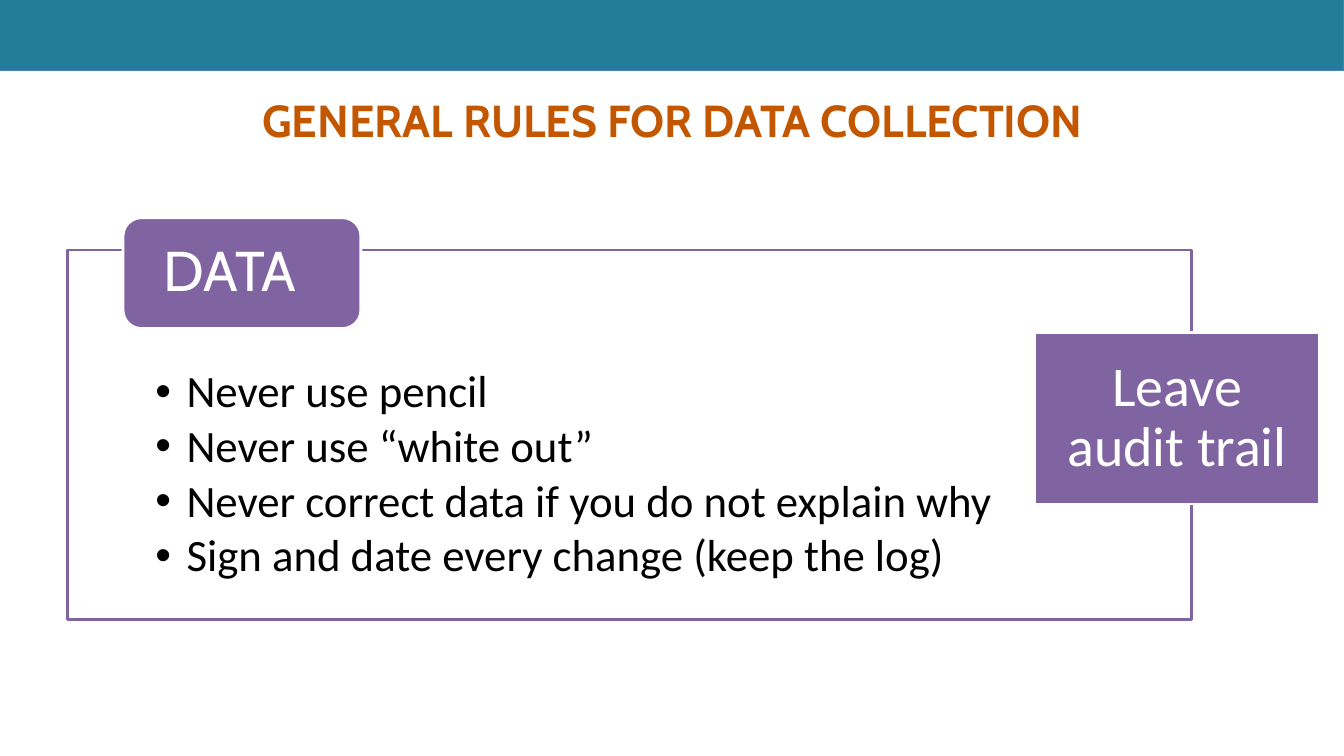
import pptx
import pptx.util
import pptx.dml.color
import pptx.enum.shapes
import pptx.enum.text
import pptx.oxml.ns
from lxml import etree

Inches = pptx.util.Inches
Pt = pptx.util.Pt
Shape = pptx.enum.shapes.MSO_SHAPE
Align = pptx.enum.text.PP_ALIGN
Anchor = pptx.enum.text.MSO_ANCHOR

TEAL, BLUE, RUST = "237C9A", "4B7EBC", "C25700"
PURPLE, WHITE, BLACK = "8064A2", "FFFFFF", "000000"
HEAD, BODY = "Cabin", "Calibri"


def color(code):
    return pptx.dml.color.RGBColor.from_string(code)


class Deck:
    def __init__(self):
        self.prs = pptx.Presentation()
        self.prs.slide_width = Inches(13.33)
        self.prs.slide_height = Inches(7.5)
        self.slide = self.prs.slides.add_slide(self.prs.slide_layouts[1])

    def place(self, shape, box):
        shape.left, shape.top, shape.width, shape.height = map(Inches, box)

    def paint(self, shape, fill, line, width):
        shape.fill.solid()
        shape.fill.fore_color.rgb = color(fill)
        shape.line.color.rgb = color(line)
        shape.line.width = Pt(width)

    def frame(self, shape, insets, anchor):
        frame = shape.text_frame
        frame.word_wrap = True
        frame.auto_size = pptx.enum.text.MSO_AUTO_SIZE.NONE
        frame.vertical_anchor = anchor
        (frame.margin_left, frame.margin_top,
         frame.margin_right, frame.margin_bottom) = map(Inches, insets)
        return frame

    def add_text(self, para, text, size, font, ink, align, bold=False):
        para.alignment = align
        para.space_before = Pt(0)
        run = para.add_run()
        run.text = text
        run.font.size = Pt(size)
        run.font.name = font
        run.font.bold = bold
        run.font.color.rgb = color(ink)

    def block(self, kind, box, fill, line, width):
        shape = self.slide.shapes.add_shape(kind, *map(Inches, box))
        shape.shadow.inherit = False
        self.paint(shape, fill, line, width)
        return shape

    def label(self, kind, box, text, font, align, insets):
        shape = self.block(kind, box, PURPLE, WHITE, 2)
        para = self.frame(shape, insets, Anchor.MIDDLE).paragraphs[0]
        para.line_spacing = 0.9
        self.add_text(para, text, 40, font, WHITE, align)

    def title(self, text, box):
        shape = self.slide.shapes.title
        self.place(shape, box)
        frame = self.frame(shape, (0.1, 0.05, 0.1, 0), Anchor.MIDDLE)
        self.add_text(frame.paragraphs[0], text, 32, HEAD, RUST,
                      Align.CENTER, True)

    def bullet(self, para):
        props = para._p.get_or_add_pPr()
        props.set("marL", str(Inches(0.31)))
        props.set("indent", str(Inches(-0.31)))
        mark = etree.SubElement(props, pptx.oxml.ns.qn("a:buChar"))
        mark.set("char", "•")

    def panel(self, items, box, insets):
        shape = self.slide.placeholders[1]
        self.place(shape, box)
        self.paint(shape, WHITE, PURPLE, 2)
        frame = self.frame(shape, insets, Anchor.TOP)
        for i, item in enumerate(items):
            para = frame.add_paragraph() if i else frame.paragraphs[0]
            self.bullet(para)
            para.level = 1
            para.line_spacing = 0.9
            para.space_after = Pt(4.5)
            self.add_text(para, item, 32, BODY, BLACK, Align.LEFT)


def main():
    deck = Deck()

    # Top band and title
    deck.block(Shape.RECTANGLE, (0, 0, 13.33, 0.7), TEAL, BLUE, 0.75)
    deck.title("GENERAL RULES FOR DATA COLLECTION", (0.67, 0.84, 12, 0.65))

    # Framed list of rules
    deck.panel(["Never use pencil",
                "Never use “white out”",
                "Never correct data if you do not explain why",
                "Sign and date every change (keep the log)"],
               (0.67, 2.48, 11.15, 3.67), (0.87, 1.18, 0.87, 0.25))

    # Labels on the frame
    deck.label(Shape.ROUNDED_RECTANGLE, (1.22, 2.16, 2.36, 1.1), "DATA",
               HEAD, Align.LEFT, (0.35, 0, 0.35, 0))
    deck.label(Shape.RECTANGLE, (10.26, 3.3, 2.83, 1.7), "Leave audit trail",
               BODY, Align.CENTER, (0.17, 0.17, 0.17, 0.17))

    deck.prs.save("out.pptx")


if __name__ == "__main__":
    main()
